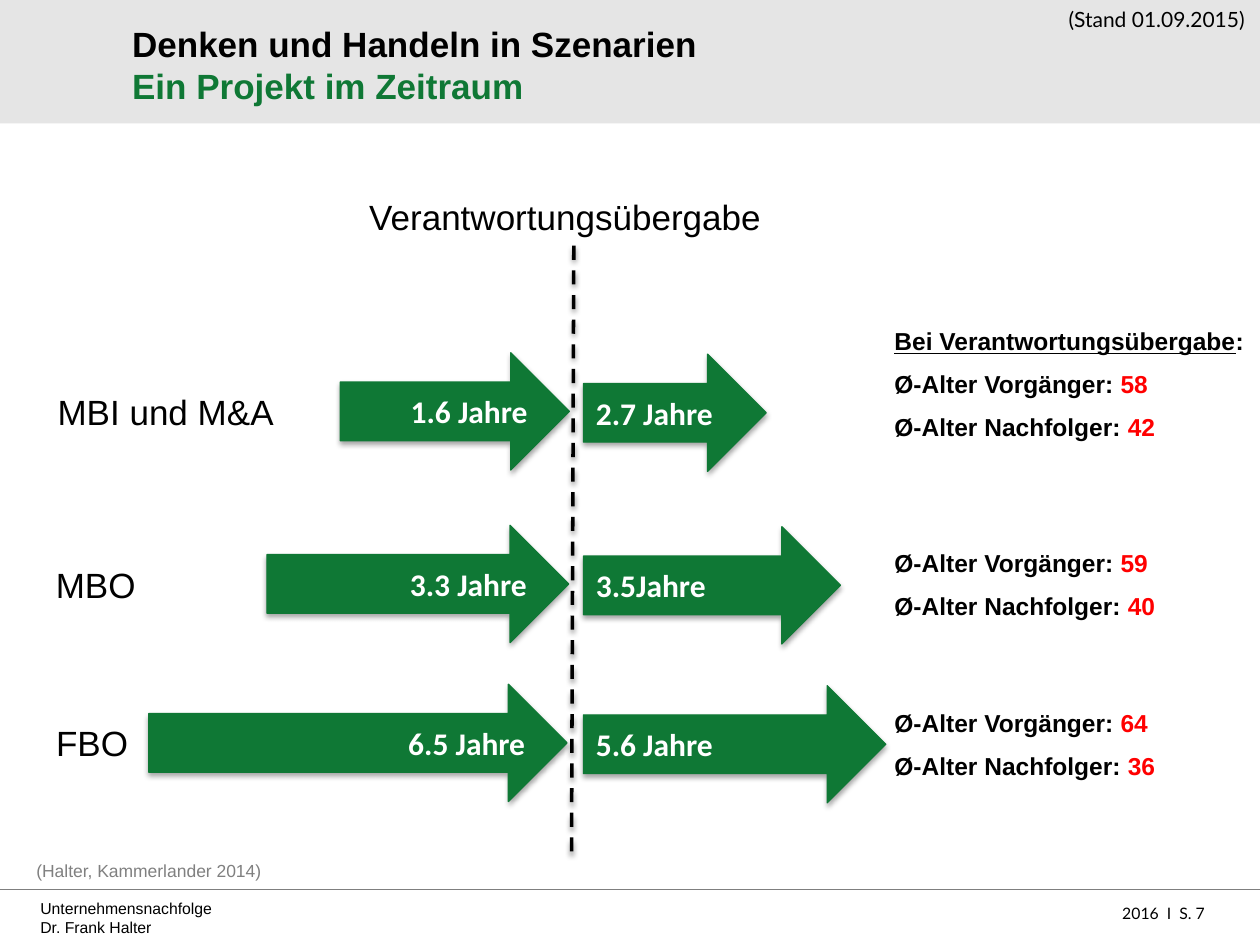
from typing import NamedTuple

from lxml.etree import SubElement
from pptx import Presentation
from pptx.dml.color import RGBColor
from pptx.enum.dml import MSO_LINE_DASH_STYLE as Dash
from pptx.enum.shapes import MSO_CONNECTOR_TYPE as Conn, MSO_SHAPE as Kind
from pptx.enum.text import MSO_VERTICAL_ANCHOR as Anchor, PP_PARAGRAPH_ALIGNMENT as Align
from pptx.oxml.ns import qn
from pptx.util import Pt

COLORS = {
    "black": "000000",
    "white": "FFFFFF",
    "green": "0F7835",
    "red": "FF0000",
    "gray": "808080",
    "rule": "7F7F7F",
    "band": "E5E5E5",
}


class Box(NamedTuple):
    left: float
    top: float
    width: float
    height: float


class Run(NamedTuple):
    text: str
    color: str = "black"
    under: bool = False


class Phase(NamedTuple):
    name: str
    side: float
    wide: float
    top: float
    tip: float
    before: str
    start: float
    after: str
    span: float
    old: str
    young: str
    facts: float


PHASES = [
    Phase("MBI und M&A", 25.2, 139, 201.6, 325.4, "1.6 Jahre", 194.4,
          "2.7 Jahre", 104.4, "58", "42", 182.9),
    Phase("MBO", 24.5, 60.5, 300.2, 325, "3.3 Jahre", 152.6,
          "3.5Jahre", 146.9, "59", "40", 309.6),
    Phase("FBO", 24.5, 56.2, 391, 324, "6.5 Jahre", 85,
          "5.6 Jahre", 172.8, "64", "36", 401),
]
SPLIT = 333.4


def tint(name: str) -> RGBColor:
    return RGBColor.from_string(COLORS[name])


def write(shape, lines: list[list[Run]], *, size: float, font: str = "Arial",
          bold: bool = False, align=Align.LEFT, anchor=Anchor.TOP,
          wrap: bool = True, gap: float = 0, lead: float = 1,
          inset: float | None = None) -> None:
    frame = shape.text_frame
    frame.word_wrap = wrap
    frame.vertical_anchor = anchor
    if inset is not None:
        frame.margin_left = frame.margin_right = Pt(inset)
        frame.margin_top = frame.margin_bottom = Pt(inset)
    for row, runs in enumerate(lines):
        para = frame.add_paragraph() if row else frame.paragraphs[0]
        para.alignment = align
        para.line_spacing = lead
        para.space_before = Pt(gap if row else 0)
        for part in runs:
            run = para.add_run()
            run.text = part.text
            run.font.name = font
            run.font.size = Pt(size)
            run.font.bold = bold
            run.font.underline = part.under
            run.font.color.rgb = tint(part.color)


def label(slide, box: Box, lines: list[list[Run]], **form) -> None:
    write(slide.shapes.add_textbox(*map(Pt, box)), lines, **form)


def shade(shape, alpha: int = 0) -> None:
    props = shape._element.spPr
    effects = SubElement(props, qn("a:effectLst"))
    if alpha:
        cast = SubElement(effects, qn("a:outerShdw"), blurRad=str(Pt(3.1)),
                          dist=str(Pt(1.8)), dir="5400000", rotWithShape="0")
        color = SubElement(cast, qn("a:srgbClr"), val=COLORS["black"])
        SubElement(color, qn("a:alpha"), val=str(alpha * 1000))


def arrow(slide, box: Box, text: str, align) -> None:
    shape = slide.shapes.add_shape(Kind.RIGHT_ARROW, *map(Pt, box))
    shape.fill.solid()
    shape.fill.fore_color.rgb = tint("green")
    shape.line.color.rgb = tint("green")
    shape.line.width = Pt(0.75)
    shade(shape, 35)
    write(shape, [[Run(text, "white")]], size=18, font="Calibri", bold=True,
          align=align, anchor=Anchor.MIDDLE)


def rule(slide, ends: tuple[float, ...], color: str, width: float,
         dash=None, alpha: int = 0) -> None:
    line = slide.shapes.add_connector(Conn.STRAIGHT, *map(Pt, ends))
    line.line.color.rgb = tint(color)
    line.line.width = Pt(width)
    if dash:
        line.line.dash_style = dash
    shade(line, alpha)


def frame(slide) -> None:
    label(slide, Box(571, 510.5, 124.5, 20), [[Run("2016  I  S. 7")]],
          size=9, font="Lato", align=Align.RIGHT, lead=1.2)
    rule(slide, (-0.7, 508.3, 722, 508.3), "rule", 0.25)
    label(slide, Box(21.6, 512, 392.4, 24.5),
          [[Run("Unternehmensnachfolge")], [Run("Dr. Frank Halter")]],
          size=9, anchor=Anchor.BOTTOM, inset=1.44)
    band = slide.shapes.add_shape(Kind.RECTANGLE, *map(Pt, Box(0, 0, 720, 70.5)))
    band.shadow.inherit = False
    band.fill.solid()
    band.fill.fore_color.rgb = tint("band")
    band.line.fill.background()
    label(slide, Box(68.4, 8.6, 622, 57),
          [[Run("Denken und Handeln in Szenarien")],
           [Run("Ein Projekt im Zeitraum", "green")]],
          size=20, bold=True, anchor=Anchor.MIDDLE)
    label(slide, Box(13.7, 485.3, 640, 21.6),
          [[Run("(Halter, Kammerlander 2014)", "gray")]],
          size=10, anchor=Anchor.BOTTOM)
    label(slide, Box(602, 0, 118, 21.6), [[Run("(Stand 01.09.2015)")]],
          size=12, font="Lato", align=Align.CENTER, wrap=False)


def draw(slide, phase: Phase, head: list[list[Run]]) -> None:
    label(slide, Box(phase.side, phase.top + 18, phase.wide, 31.7),
          [[Run(phase.name)]], size=20, align=Align.CENTER, wrap=False)
    arrow(slide, Box(phase.start, phase.top, phase.tip - phase.start, 67),
          phase.before, Align.RIGHT)
    arrow(slide, Box(SPLIT, phase.top + 0.8, phase.span, 67),
          phase.after, Align.LEFT)
    facts = head + [
        [Run("Ø-Alter Vorgänger: "), Run(phase.old, "red")],
        [Run("Ø-Alter Nachfolger: "), Run(phase.young, "red")],
    ]
    label(slide, Box(504, phase.facts, 215, 25 * len(facts)), facts,
          size=14, bold=True, wrap=False, gap=7.6)


def main() -> None:
    deck = Presentation()
    deck.slide_width, deck.slide_height = Pt(720), Pt(540)
    slide = deck.slides.add_slide(deck.slide_layouts[6])
    frame(slide)
    head = [[Run("Bei Verantwortungsübergabe", under=True), Run(":")]]
    for row, phase in enumerate(PHASES):
        draw(slide, phase, [] if row else head)
    rule(slide, (327.9, 140.4, 326.6, 486.7), "black", 2, Dash.DASH, 38)
    label(slide, Box(203, 108, 245.5, 31.7), [[Run("Verantwortungsübergabe ")]],
          size=20, align=Align.CENTER, wrap=False)
    deck.save("out.pptx")


if __name__ == "__main__":
    main()
